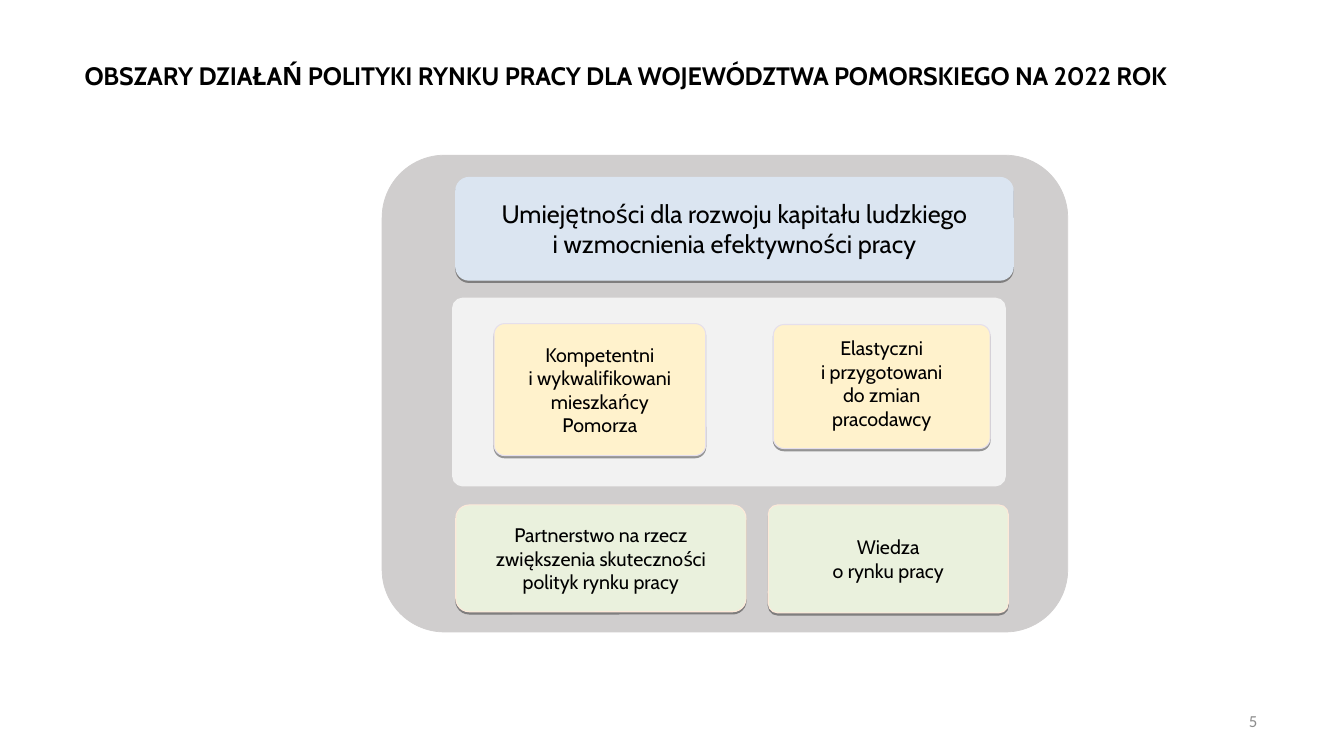
import pptx
import pptx.dml.color
import pptx.enum.shapes
import pptx.enum.text
import pptx.oxml
import pptx.oxml.ns
import pptx.util
from dataclasses import dataclass

PX = 9144  # EMU per px, 100 px to the inch
ALIGN = pptx.enum.text.PP_ALIGN


@dataclass(frozen=True)
class Theme:
    font: str = "Cabin"
    number_font: str = "Calibri"
    text: str = "000000"
    number: str = "8C8C8C"
    panel: str = "D0CECE"
    group: str = "F2F2F2"
    blue: str = "DBE5F1"
    green: str = "EAF1DD"
    green_line: str = "FDE9D9"
    yellow: str = "FFF2CC"
    yellow_line: str = "E5DFEC"
    large: int = 18
    body: int = 14
    small: int = 12


THEME = Theme()


def px(*lengths):
    return [pptx.util.Emu(n * PX) for n in lengths]


def rgb(value):
    return pptx.dml.color.RGBColor.from_string(value)


def write(sp, paragraphs, size, align, color=THEME.text, font=THEME.font):
    """Fill a shape with paragraphs, each a list of lines; return its text frame."""
    tf = sp.text_frame
    tf.word_wrap = True
    tf.vertical_anchor = pptx.enum.text.MSO_ANCHOR.MIDDLE
    for i, lines in enumerate(paragraphs):
        p = tf.paragraphs[0] if i == 0 else tf.add_paragraph()
        p.alignment = align
        for j, line in enumerate(lines):
            if j:
                p.add_line_break()
            r = p.add_run()
            r.text = line
            r.font.name = font
            r.font.size = pptx.util.Pt(size)
            r.font.color.rgb = rgb(color)
    return tf


def add_round_rect(slide, box, radius, fill, line, width):
    sp = slide.shapes.add_shape(
        pptx.enum.shapes.MSO_SHAPE.ROUNDED_RECTANGLE, *px(*box))
    sp.adjustments[0] = radius
    sp.fill.solid()
    sp.fill.fore_color.rgb = rgb(fill)
    sp.line.color.rgb = rgb(line)
    sp.line.width = pptx.util.Pt(width)
    sp.shadow.inherit = False
    return sp


def add_drop_shadow(sp):
    effects = sp._element.spPr.find(pptx.oxml.ns.qn("a:effectLst"))
    effects.append(pptx.oxml.parse_xml(
        f'<a:outerShdw {pptx.oxml.ns.nsdecls("a")} blurRad="0" dist="20320" '
        'dir="5400000" rotWithShape="0"><a:srgbClr val="000000">'
        '<a:alpha val="38000"/></a:srgbClr></a:outerShdw>'))


def add_card(slide, box, radius, fill, line, paragraphs, size=THEME.body):
    sp = add_round_rect(slide, box, radius, fill, line, 0.75)
    add_drop_shadow(sp)
    return write(sp, paragraphs, size, ALIGN.CENTER)


def add_title(slide, box, text):
    sp = slide.shapes.add_textbox(*px(*box))
    p = write(sp, [[text]], THEME.large, ALIGN.LEFT).paragraphs[0]
    p.line_spacing = 1.5
    p.runs[0].font.bold = True
    p.runs[0].font._element.set("spc", "-10")


def add_slide_number(slide, box, number):
    sp = slide.shapes.add_textbox(*px(*box))
    write(sp, [[number]], THEME.small, ALIGN.RIGHT, THEME.number, THEME.number_font)


def add_residents_and_employers(slide, box):
    x, y, _, _ = box
    add_round_rect(slide, box, 0.053, THEME.group, THEME.group, 1)
    tf = add_card(slide, (x + 318, y + 26, 215, 123), 0.085,
                  THEME.yellow, THEME.yellow_line,
                  [["Elastyczni"], ["i przygotowani", "do zmian"], ["pracodawcy"]])
    tf.margin_bottom, = px(12)
    add_card(slide, (x + 41, y + 25, 210, 131), 0.081,
             THEME.yellow, THEME.yellow_line,
             [["Kompetentni"], ["i wykwalifikowani mieszkańcy", "Pomorza"]])


def add_policy_areas(slide, box):
    x, y, _, _ = box
    add_round_rect(slide, box, 0.131, THEME.panel, THEME.panel, 0.5)
    add_residents_and_employers(slide, (x + 70, y + 142, 548, 186))
    add_card(slide, (x + 73, y + 22, 553, 102), 0.131, THEME.blue, THEME.blue,
             [["Umiejętności dla rozwoju kapitału ludzkiego",
               "i wzmocnienia efektywności pracy"]], THEME.large)
    add_card(slide, (x + 383, y + 347, 238, 107), 0.086,
             THEME.green, THEME.green_line, [["Wiedza", "o rynku pracy"]])
    add_card(slide, (x + 73, y + 347, 288, 106), 0.126,
             THEME.green, THEME.green_line,
             [["Partnerstwo na rzecz zwiększenia skuteczności polityk rynku pracy"]])


def main():
    prs = pptx.Presentation()
    prs.slide_width, prs.slide_height = px(1333, 750)
    slide = prs.slides.add_slide(prs.slide_layouts[6])
    add_title(slide, (74, 15, 1184, 104),
              "OBSZARY DZIAŁAŃ POLITYKI RYNKU PRACY DLA "
              "WOJEWÓDZTWA POMORSKIEGO NA 2022 ROK")
    add_slide_number(slide, (942, 695, 315, 40), "5")
    add_policy_areas(slide, (379, 154, 680, 473))
    prs.save("out.pptx")


if __name__ == "__main__":
    main()
